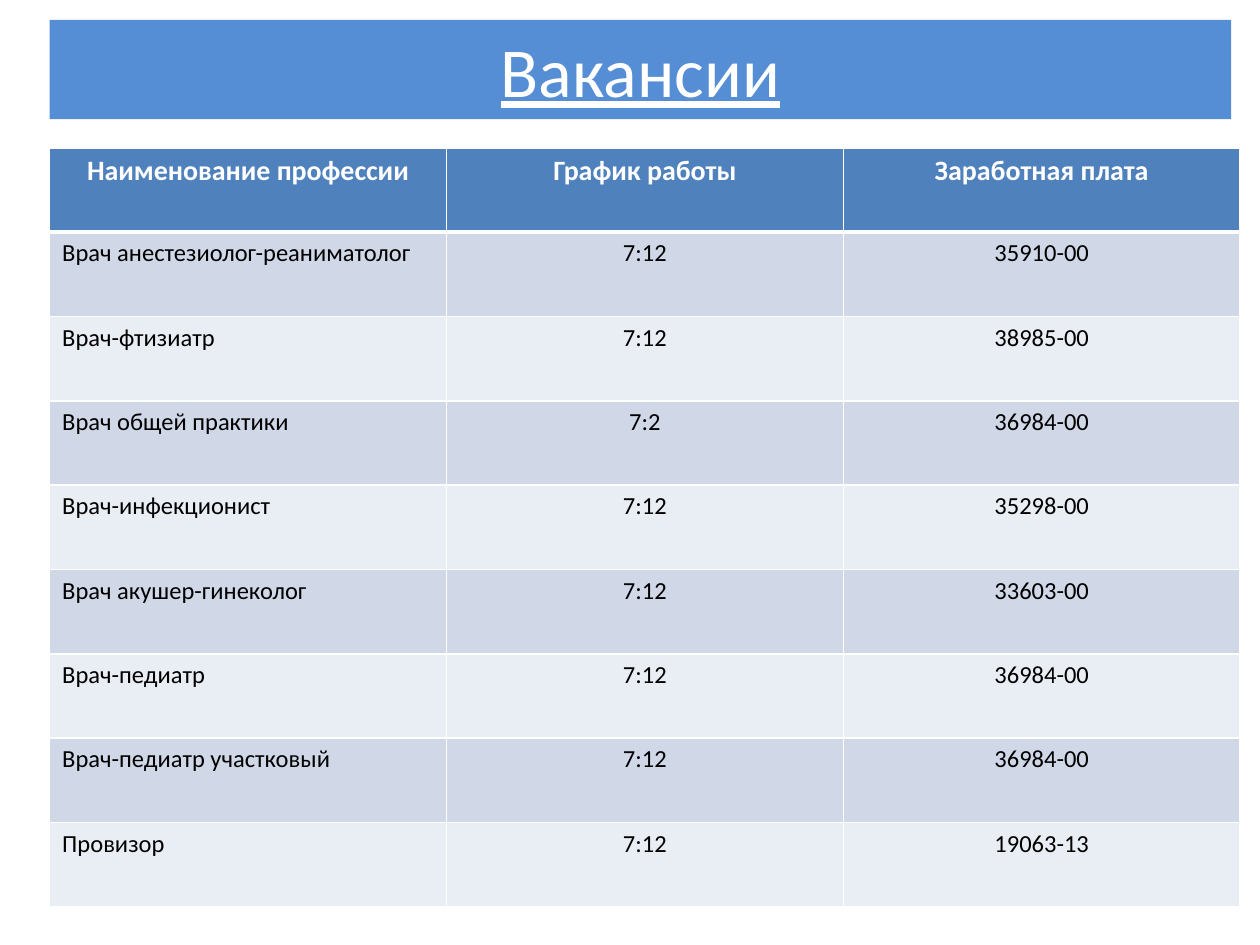
from dataclasses import dataclass

from lxml import etree
from pptx import Presentation
from pptx.dml.color import RGBColor
from pptx.enum import text
from pptx.oxml import ns
from pptx.util import Cm, Pt


@dataclass(frozen=True)
class Theme:
    font: str = "Calibri"
    white: str = "FFFFFF"
    black: str = "000000"
    banner: str = "558ED5"
    header: str = "4F81BD"
    bands: tuple = ("D0D8E8", "E9EDF4")
    title_size: int = 40
    header_size: int = 16
    body_size: int = 14


THEME = Theme()
LEFT = Cm(1)
COL_WIDTH = Cm(8)
ROW_HEIGHT = Cm(1.7)

HEADERS = ("Наименование профессии", "График работы", "Заработная плата")
VACANCIES = (
    ("Врач анестезиолог-реаниматолог", "7:12", "35910-00"),
    ("Врач-фтизиатр", "7:12", "38985-00"),
    ("Врач общей практики", "7:2", "36984-00"),
    ("Врач-инфекционист", "7:12", "35298-00"),
    ("Врач акушер-гинеколог", "7:12", "33603-00"),
    ("Врач-педиатр", "7:12", "36984-00"),
    ("Врач-педиатр участковый", "7:12", "36984-00"),
    ("Провизор", "7:12", "19063-13"),
)


def set_fill(obj, color):
    obj.fill.solid()
    obj.fill.fore_color.rgb = RGBColor.from_string(color)


def write(tf, content, size, color, bold=False, underline=False, centred=True):
    tf.text = content
    p = tf.paragraphs[0]
    p.alignment = text.PP_ALIGN.CENTER if centred else text.PP_ALIGN.LEFT
    font = p.runs[0].font
    font.name, font.size = THEME.font, Pt(size)
    font.bold, font.underline = bold, underline
    font.color.rgb = RGBColor.from_string(color)


def set_borders(cell, **widths):
    tc_pr = cell._tc.get_or_add_tcPr()
    for i, side in enumerate("LRTB"):
        ln = etree.Element(ns.qn(f"a:ln{side}"), w=str(Pt(widths.get(side, 1))))
        fill = etree.SubElement(ln, ns.qn("a:solidFill"))
        etree.SubElement(fill, ns.qn("a:srgbClr"), val=THEME.white)
        tc_pr.insert(i, ln)


def add_title(slide, content):
    sp = slide.shapes.title
    sp.left, sp.top, sp.width, sp.height = LEFT, Cm(0.4), Cm(23.82), Cm(2)
    set_fill(sp, THEME.banner)
    sp.text_frame.vertical_anchor = text.MSO_ANCHOR.MIDDLE
    write(sp.text_frame, content, THEME.title_size, THEME.white, underline=True)


def add_vacancies(slide, headers, vacancies):
    rows, cols = len(vacancies) + 1, len(headers)
    table = slide.shapes.add_table(
        rows, cols, LEFT, Cm(2.98), COL_WIDTH * cols, ROW_HEIGHT * rows).table
    for column in table.columns:
        column.width = COL_WIDTH
    for row in table.rows:
        row.height = ROW_HEIGHT
    for c, header in enumerate(headers):
        cell = table.cell(0, c)
        set_borders(cell, B=3)
        set_fill(cell, THEME.header)
        write(cell.text_frame, header, THEME.header_size, THEME.white, bold=True)
    for r, vacancy in enumerate(vacancies, 1):
        for c, value in enumerate(vacancy):
            cell = table.cell(r, c)
            set_borders(cell, T=3 if r == 1 else 1)
            set_fill(cell, THEME.bands[(r - 1) % 2])
            write(cell.text_frame, value, THEME.body_size, THEME.black, centred=c > 0)


def main():
    prs = Presentation()
    prs.slide_width, prs.slide_height = Cm(25.4), Cm(19.05)
    slide = prs.slides.add_slide(prs.slide_layouts[5])
    add_title(slide, "Вакансии")
    add_vacancies(slide, HEADERS, VACANCIES)
    prs.save("out.pptx")


if __name__ == "__main__":
    main()
